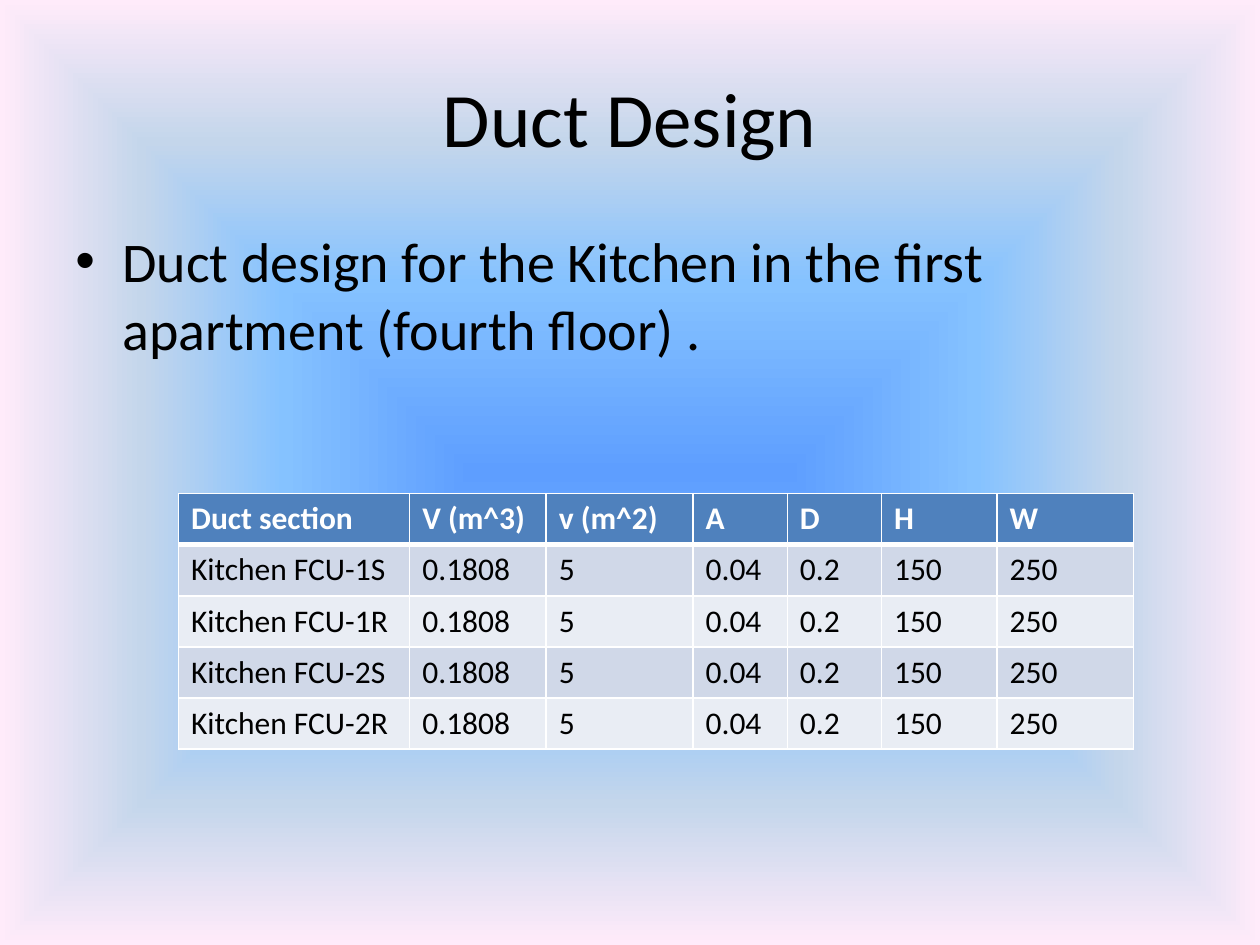
from lxml import etree
from pptx import Presentation
from pptx.dml.color import RGBColor
from pptx.enum.text import MSO_ANCHOR, PP_ALIGN
from pptx.oxml import parse_xml
from pptx.oxml.ns import nsdecls, qn
from pptx.util import Cm, Pt

CENTER = PP_ALIGN.CENTER
LEFT = PP_ALIGN.LEFT
MIDDLE = MSO_ANCHOR.MIDDLE
TOP = MSO_ANCHOR.TOP

BLACK = RGBColor(0x00, 0x00, 0x00)
WHITE = RGBColor(0xFF, 0xFF, 0xFF)
HEADER_BLUE = RGBColor(0x4F, 0x81, 0xBD)
BANDS = [RGBColor(0xD0, 0xD8, 0xE8), RGBColor(0xE9, 0xED, 0xF4)]
GLOW = [
    (0, RGBColor(0x5E, 0x9E, 0xFF)),
    (40, RGBColor(0x85, 0xC2, 0xFF)),
    (70, RGBColor(0xC4, 0xD6, 0xEB)),
    (100, RGBColor(0xFF, 0xEB, 0xFA)),
]
FONT = "Calibri"

TITLE = "Duct Design"
SUMMARY = "Duct design for the Kitchen in the first apartment (fourth floor) ."
HEADINGS = ["Duct section", "V (m^3)", "v (m^2)", "A", "D", "H", "W"]
SECTIONS = ["Kitchen FCU-1S", "Kitchen FCU-1R", "Kitchen FCU-2S", "Kitchen FCU-2R"]
SIZING = ["0.1808", "5", "0.04", "0.2", "150", "250"]
COLUMN_WIDTHS = [4.66, 2.75, 2.96, 1.9, 1.9, 2.33, 2.75]
ROW_HEIGHT = 1.03


def style_run(run, size, color, bold=False):
    run.font.name = FONT
    run.font.size = Pt(size)
    run.font.bold = bold
    run.font.color.rgb = color


def add_text(slide, text, box, size, align, anchor):
    frame = slide.shapes.add_textbox(*(Cm(length) for length in box)).text_frame
    frame.word_wrap = True
    frame.vertical_anchor = anchor
    frame.text = text
    paragraph = frame.paragraphs[0]
    paragraph.alignment = align
    style_run(paragraph.runs[0], size, BLACK)
    return paragraph


def add_bullet(paragraph, indent):
    paragraph.space_before = Pt(6.4)
    properties = paragraph._p.get_or_add_pPr()
    properties.set("marL", str(indent))
    properties.set("indent", str(-indent))
    etree.SubElement(properties, qn("a:buFont")).set("typeface", "Arial")
    etree.SubElement(properties, qn("a:buChar")).set("char", "•")


def paint_background(slide):
    slide.background.fill.gradient()
    plain = slide.element.find(".//" + qn("a:gradFill"))
    stops = "".join(
        f'<a:gs pos="{position * 1000}"><a:srgbClr val="{color}"/></a:gs>'
        for position, color in GLOW
    )
    glow = parse_xml(
        f'<a:gradFill rotWithShape="1" {nsdecls("a")}><a:gsLst>{stops}</a:gsLst>'
        '<a:path path="shape"><a:fillToRect l="50000" t="50000" r="50000" b="50000"/>'
        "</a:path></a:gradFill>"
    )
    plain.getparent().replace(plain, glow)


def add_borders(cell, top, bottom):
    properties = cell._tc.get_or_add_tcPr()
    for side, width in (("L", 1), ("R", 1), ("T", top), ("B", bottom)):
        line = etree.SubElement(properties, qn(f"a:ln{side}"), w=str(Pt(width)))
        fill = etree.SubElement(line, qn("a:solidFill"))
        etree.SubElement(fill, qn("a:srgbClr"), val=str(WHITE))


def add_duct_table(slide, left, top):
    rows = [HEADINGS] + [[section] + SIZING for section in SECTIONS]
    table = slide.shapes.add_table(
        len(rows), len(HEADINGS), Cm(left), Cm(top),
        Cm(sum(COLUMN_WIDTHS)), Cm(ROW_HEIGHT * len(rows)),
    ).table
    for column, width in zip(table.columns, COLUMN_WIDTHS):
        column.width = Cm(width)
    for r, values in enumerate(rows):
        table.rows[r].height = Cm(ROW_HEIGHT)
        heading = r == 0
        for c, value in enumerate(values):
            cell = table.cell(r, c)
            cell.text = value
            style_run(cell.text_frame.paragraphs[0].runs[0], 18,
                      WHITE if heading else BLACK, heading)
            add_borders(cell, 3 if r == 1 else 1, 3 if heading else 1)
            cell.fill.solid()
            cell.fill.fore_color.rgb = HEADER_BLUE if heading else BANDS[(r - 1) % 2]


def main():
    deck = Presentation()
    deck.slide_width, deck.slide_height = Cm(25.4), Cm(19.05)
    slide = deck.slides.add_slide(deck.slide_layouts[6])
    paint_background(slide)
    add_text(slide, TITLE, (1.27, 0.76, 22.86, 3.18), 44, CENTER, MIDDLE)
    summary = add_text(slide, SUMMARY, (1.27, 4.45, 22.86, 12.57), 32, LEFT, TOP)
    add_bullet(summary, Cm(0.95))
    add_duct_table(slide, 3.6, 9.95)
    deck.save("out.pptx")


if __name__ == "__main__":
    main()
